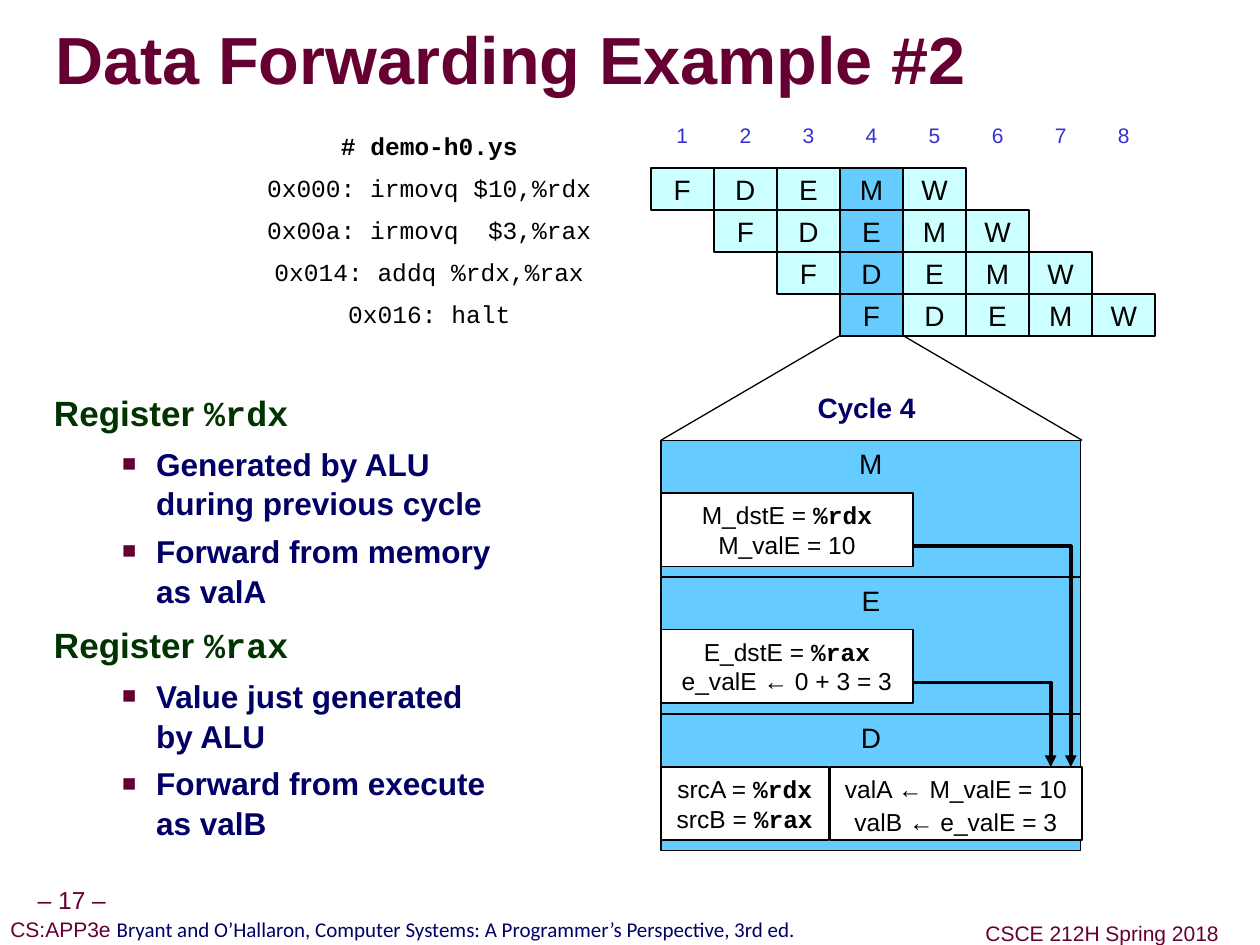
from lxml import etree
from pptx import Presentation
from pptx import util as u
from pptx.dml.color import RGBColor
from pptx.enum import shapes, text
from pptx.oxml import ns

I = u.Inches
rgb = RGBColor.from_string
MONO = dict(name="Courier New", bold=True)
MID, TOP = text.MSO_ANCHOR.MIDDLE, text.MSO_ANCHOR.TOP
CENTER, LEFT = text.PP_ALIGN.CENTER, text.PP_ALIGN.LEFT
BLACK, WHITE, SKY, PALE = "000000", "FFFFFF", "66CCFF", "CCFFFF"
WINE, NAVY, GREEN = "660033", "000066", "003300"


def write(par, words, size, color=BLACK, bold=False, name="Arial", alt=MONO, align=CENTER, gap=1.0):
    par.alignment, par.line_spacing = align, gap
    for i, part in enumerate(words.split("`")):
        if not part:
            continue
        run = par.add_run()
        run.text = part
        look = dict(name=name, bold=bold, size=u.Pt(size), color=color)
        if i % 2:
            look.update(alt)
        run.font.color.rgb = rgb(look.pop("color"))
        for key, val in look.items():
            setattr(run.font, key, val)


def box(x, y, w, h, words, size, fill=None, line=0, anchor=MID, pad=None, wrap=False, **look):
    if fill:
        item = slide.shapes.add_shape(shapes.MSO_SHAPE.RECTANGLE, I(x), I(y), I(w), I(h))
        item.shadow.inherit = False
        item.fill.solid()
        item.fill.fore_color.rgb = rgb(fill)
        if line:
            item.line.color.rgb = rgb(BLACK)
            item.line.width = u.Pt(line)
        else:
            item.line.fill.background()
    else:
        item = slide.shapes.add_textbox(I(x), I(y), I(w), I(h))
    frame = item.text_frame
    frame.word_wrap, frame.vertical_anchor = wrap, anchor
    if pad is not None:
        for side in ("left", "right", "top", "bottom"):
            setattr(frame, "margin_" + side, I(pad))
    for i, row in enumerate(words.split("\n")):
        par = frame.add_paragraph() if i else frame.paragraphs[0]
        write(par, row, size, **look)
    return item


deck = Presentation()
deck.slide_width, deck.slide_height = I(9.99), I(7.49)
slide = deck.slides.add_slide(deck.slide_layouts[5])

title = slide.shapes.title
title.left, title.top, title.width, title.height = I(0.44), I(0.08), I(9.52), I(0.85)
frame = title.text_frame
frame.word_wrap, frame.vertical_anchor = True, MID
frame.auto_size = text.MSO_AUTO_SIZE.NONE
for side in ("left", "right", "top", "bottom"):
    setattr(frame, "margin_" + side, 0)
write(frame.paragraphs[0], "Data Forwarding Example #2", 38, WINE, True, align=LEFT, gap=0.87)
glow = etree.fromstring(
    f'<a:effectLst {ns.nsdecls("a")}><a:outerShdw dist="35921" dir="2700000">'
    '<a:srgbClr val="969696"/></a:outerShdw></a:effectLst>')
frame.paragraphs[0].runs[0].font.fill._xPr.find(ns.qn("a:solidFill")).addnext(glow)

box(0.24, 6.99, 0.66, 0.31, "– 17 –", 14, pad=0.05, color=WINE, gap=0.9)
box(0, 7.24, 6.39, 0.28,
    "CS:APP3e `Bryant and O’Hallaron, Computer Systems: A Programmer’s Perspective, 3rd ed.",
    12, pad=0.05, color=WINE, gap=0.9, alt=dict(name="Calibri", color=NAVY))
box(7.76, 7.27, 1.96, 0.28, "CSCE 212H Spring 2018", 12, pad=0.05, color=WINE, gap=0.9)

notes = [
    (0, "Register `%rdx"),
    (1, "Generated by ALU during previous cycle"),
    (1, "Forward from memory as valA"),
    (0, "Register `%rax"),
    (1, "Value just generated by ALU"),
    (1, "Forward from execute as valB"),
]
body = slide.shapes.add_textbox(I(0.33), I(3.08), I(3.77), I(3.7)).text_frame
body.word_wrap = True
for i, (level, words) in enumerate(notes):
    par = body.add_paragraph() if i else body.paragraphs[0]
    par.level = level
    props = par._p.get_or_add_pPr()
    props.set("marL", str(I((0.42, 0.81)[level])))
    props.set("indent", str(I((-0.42, -0.27)[level])))
    if level:
        marks = etree.fromstring(
            f'<a:pPr {ns.nsdecls("a")}><a:buClr><a:srgbClr val="{WINE}"/></a:buClr>'
            '<a:buSzPct val="75000"/><a:buFont typeface="Arial"/><a:buChar char="■"/></a:pPr>')
        for mark in list(marks):
            props.append(mark)
    if i:
        par.space_before = u.Pt((10, 4.5)[level])
    write(par, words, (20, 18)[level], (GREEN, NAVY)[level], True, align=LEFT, gap=(0.95, 1.05)[level])

code = ["# demo-h0.ys", "0x000: irmovq $10,%rdx", "0x00a: irmovq  $3,%rax",
        "0x014: addq %rdx,%rax", "0x016: halt"]
for i, row in enumerate(code):
    box(1.99, 0.99 + i / 3, 2.83, 0.33, row, 14, WHITE, name="Courier New", bold=i == 0)

for col in range(8):
    box(5.16 + col / 2, 0.91, 0.5, 0.33, str(col + 1), 12, WHITE, color="3333CC")
for row in range(4):
    for step, stage in enumerate("FDEMW"):
        col = row + step
        box(5.16 + col / 2, 1.33 + row / 3, 0.5, 1 / 3, stage, 16, SKY if col == 3 else PALE, 1)

for start, end in ((6.66, 5.24), (7.16, 8.58)):
    ray = slide.shapes.add_connector(shapes.MSO_CONNECTOR.STRAIGHT, I(start), I(2.66), I(end), I(3.49))
    ray.line.color.rgb = rgb(BLACK)
    ray.line.width = u.Pt(0.75)
    etree.SubElement(ray._element.spPr, ns.qn("a:effectLst"))
box(5.83, 3.08, 2.08, 0.37, "Cycle 4", 16, anchor=TOP, wrap=True, color=NAVY, bold=True, gap=0.9)

for i, stage in enumerate("MED"):
    box(5.24, 3.49 + i * 1.085, 3.33, 1.08, stage, 16, SKY, 0.75, TOP)
facts = [
    (5.24, 3.91, 2, "M_dstE = `%rdx\nM_valE = 10", 1),
    (5.24, 4.99, 2, "E_dstE = `%rax\ne_valE ← 0 + 3 = 3", 1),
    (5.24, 6.08, 1.33, "srcA = `%rdx\nsrcB = `%rax", 1),
    (6.58, 6.08, 2, "valA ← M_valE = 10\nvalB ← e_valE = 3", 1.1),
]
for x, y, w, words, gap in facts:
    box(x, y, w, 0.58, words, 14, WHITE, 1, gap=gap)

for y, turn in ((4.33, 8.49), (5.41, 8.33)):
    pen = slide.shapes.build_freeform(I(7.24), I(y))
    pen.add_line_segments([(I(turn), I(y)), (I(turn), I(6.08))], close=False)
    wire = pen.convert_to_shape()
    wire.shadow.inherit = False
    wire.fill.background()
    wire.line.color.rgb = rgb(BLACK)
    wire.line.width = u.Pt(2.25)
    etree.SubElement(wire.line._get_or_add_ln(), ns.qn("a:tailEnd"), type="triangle")

deck.save("out.pptx")
